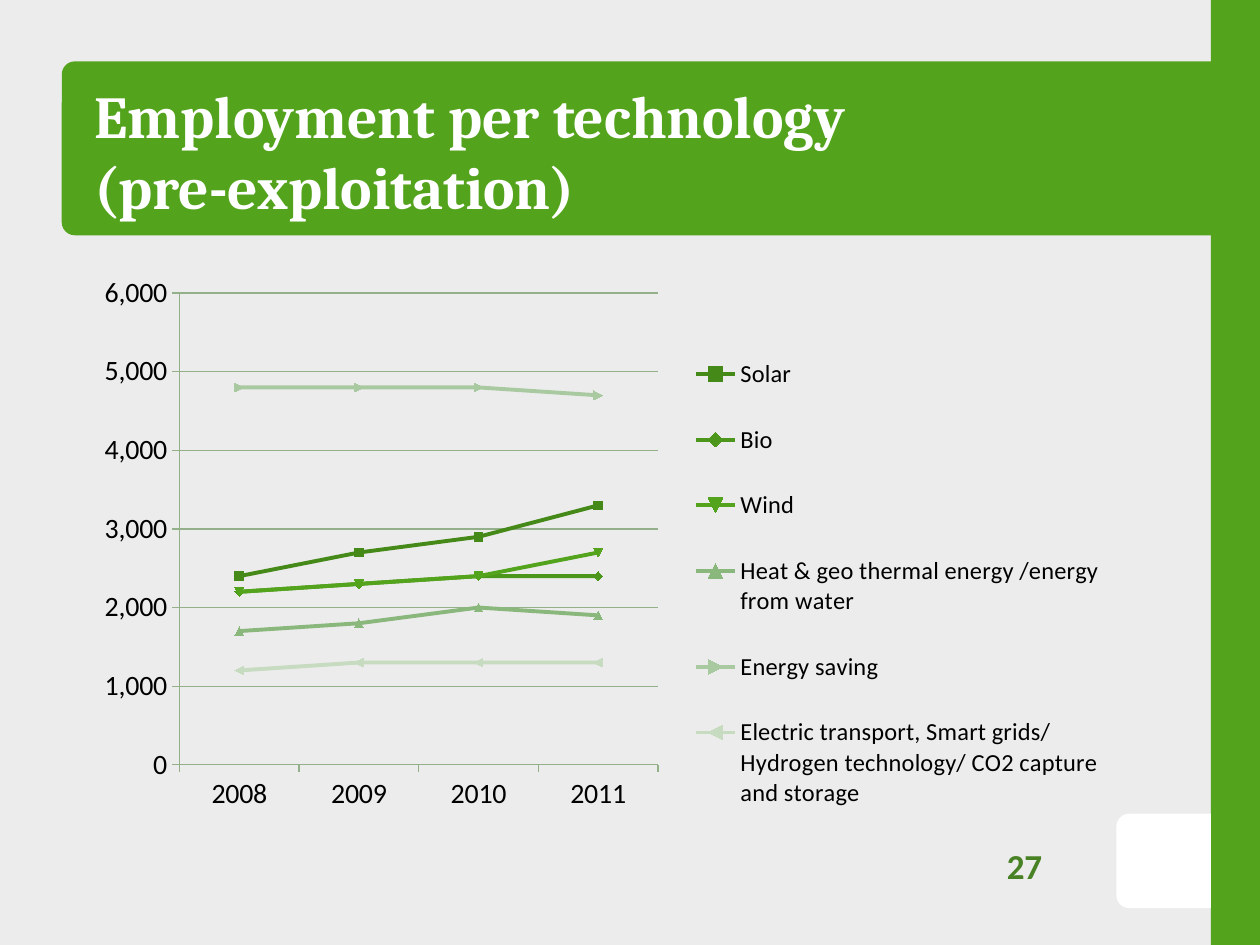
from lxml import etree
from pptx import Presentation
from pptx.chart.data import CategoryChartData
from pptx.dml.color import RGBColor
from pptx.enum.chart import XL_CHART_TYPE, XL_LEGEND_POSITION, XL_TICK_MARK
from pptx.enum.shapes import MSO_SHAPE
from pptx.enum.text import MSO_ANCHOR, PP_ALIGN
from pptx.oxml.ns import qn
from pptx.util import Inches, Pt

LINE_MARKERS = XL_CHART_TYPE.LINE_MARKERS
RIGHT = XL_LEGEND_POSITION.RIGHT
OUTSIDE = XL_TICK_MARK.OUTSIDE
MIDDLE = MSO_ANCHOR.MIDDLE
LEFT = PP_ALIGN.LEFT
RECT = MSO_SHAPE.RECTANGLE
ROUND_RECT = MSO_SHAPE.ROUNDED_RECTANGLE
ROUND_TOP = MSO_SHAPE.ROUND_2_SAME_RECTANGLE

W, H = 10, 7.5
GREEN, DARK_GREEN, AXIS_GREEN = "53A31D", "488225", "93B08A"
WHITE, BLACK, PAPER = "FFFFFF", "000000", "ECECEC"

YEARS = ["2008", "2009", "2010", "2011"]
SERIES = [
    ("Solar", "458A18", [2400, 2700, 2900, 3300]),
    ("Bio", "4B961B", [2200, 2300, 2400, 2400]),
    ("Wind", GREEN, [2200, 2300, 2400, 2700]),
    ("Heat & geo thermal energy /energy from water", "8AB77C",
     [1700, 1800, 2000, 1900]),
    ("Energy saving", "A9CAA0", [4800, 4800, 4800, 4700]),
    ("Electric transport, Smart grids/ Hydrogen technology/ CO2 capture and storage",
     "C6DBC0", [1200, 1300, 1300, 1300]),
]


def rgb(value):
    return RGBColor.from_string(value)


def box(left, top, width, height):
    """Turn shares of the slide's size into lengths."""
    return [Inches(v) for v in (left * W, top * H, width * W, height * H)]


def set_font(font, color, **values):
    font.color.rgb = rgb(color)
    for name, value in values.items():
        setattr(font, name, value)


def add_block(s, kind, area, fill, radius=None, rotation=0):
    sp = s.shapes.add_shape(kind, *box(*area))
    sp.shadow.inherit = False
    sp.fill.solid()
    sp.fill.fore_color.rgb = rgb(fill)
    sp.line.fill.background()
    sp.rotation = rotation
    if radius:
        sp.adjustments[0] = radius


def write(sp, text, margins, color, **font):
    tf = sp.text_frame
    tf.word_wrap = True
    tf.vertical_anchor = MIDDLE
    sides = ("margin_left", "margin_top", "margin_right", "margin_bottom")
    for side, margin in zip(sides, margins):
        setattr(tf, side, Inches(margin))
    p = tf.paragraphs[0]
    p.text = text
    p.alignment = LEFT
    for r in p.runs:
        set_font(r.font, color, **font)


def add_title(s, text, area):
    sp = s.shapes.title
    sp.left, sp.top, sp.width, sp.height = box(*area)
    s.shapes._spTree.append(sp._element)  # bring in front of the band
    write(sp, text, (0.1, 0.08, 0.1, 0.05), WHITE,
          name="Cambria", size=Pt(34), bold=True)


def make_layout(x, y, w, h, inner=False):
    layout = etree.Element(qn("c:layout"))
    manual = etree.SubElement(layout, qn("c:manualLayout"))
    values = {"xMode": "edge", "yMode": "edge", "x": x, "y": y, "w": w, "h": h}
    if inner:
        values = {"layoutTarget": "inner", **values}
    for tag, value in values.items():
        etree.SubElement(manual, qn("c:" + tag)).set("val", str(value))
    return layout


def set_layout(parent, layout, after=None):
    for old in parent.findall(qn("c:layout")):
        parent.remove(old)
    if after is None:
        parent.insert(0, layout)
    else:
        after.addnext(layout)


def format_axis(axis):
    axis.major_tick_mark = OUTSIDE
    axis.format.line.color.rgb = rgb(AXIS_GREEN)
    axis.format.line.width = Pt(0.75)
    set_font(axis.tick_labels.font, BLACK, name="Calibri", size=Pt(16))


def add_line_chart(s, area):
    data = CategoryChartData(number_format="#,##0")
    data.categories = YEARS
    for name, _, values in SERIES:
        data.add_series(name, values)
    chart = s.shapes.add_chart(LINE_MARKERS, *box(*area), data).chart
    chart.has_title = False
    set_font(chart.font, DARK_GREEN, name="Calibri", size=Pt(10))

    # Axes and gridlines
    for axis in (chart.category_axis, chart.value_axis):
        format_axis(axis)
    axis = chart.value_axis
    axis.minimum_scale, axis.maximum_scale, axis.major_unit = 0, 6000, 1000
    axis.tick_labels.number_format = "#,##0"
    axis.tick_labels.number_format_is_linked = False
    axis.has_major_gridlines = True
    axis.major_gridlines.format.line.color.rgb = rgb(AXIS_GREEN)
    axis.major_gridlines.format.line.width = Pt(0.75)

    # Lines and markers
    plot = chart.plots[0]
    plot.vary_by_categories = False
    for series, (_, color, _) in zip(plot.series, SERIES):
        series.smooth = False
        series.format.line.color.rgb = rgb(color)
        series.format.line.width = Pt(2.25)
        series.marker.format.fill.solid()
        series.marker.format.fill.fore_color.rgb = rgb(color)
        series.marker.format.line.color.rgb = rgb(color)

    # Legend and placement inside the chart
    chart.has_legend = True
    legend = chart.legend
    legend.position = RIGHT
    legend.include_in_layout = False
    set_font(legend.font, BLACK, name="Calibri", size=Pt(14))
    legend_xml = legend._element
    set_layout(legend_xml, make_layout(0.56, 0.08, 0.43, 0.86),
               after=legend_xml.find(qn("c:legendPos")))
    plot_area = chart._chartSpace.chart.plotArea
    set_layout(plot_area, make_layout(0.07, 0.03, 0.47, 0.78, inner=True))


def main():
    prs = Presentation()
    prs.slide_width, prs.slide_height = Inches(W), Inches(H)
    s = prs.slides.add_slide(prs.slide_layouts[5])
    s.background.fill.solid()
    s.background.fill.fore_color.rgb = rgb(PAPER)

    # Side bar, page tab and title band
    add_block(s, RECT, (0.961, 0, 0.039, 1), GREEN)
    add_block(s, ROUND_TOP, (0.886, 0.861, 0.075, 0.1), WHITE, 0.136, 270)
    add_block(s, ROUND_RECT, (0.049, 0.065, 0.939, 0.184), GREEN, 0.075)
    add_title(s, "Employment per technology\n(pre-exploitation)",
              (0.065, 0.065, 0.908, 0.184))

    # Page number
    number = s.shapes.add_textbox(*box(0.799, 0.884, 0.062, 0.063))
    write(number, "27", (0, 0, 0, 0), DARK_GREEN,
          name="Calibri", size=Pt(20), bold=True)

    add_line_chart(s, (0.083, 0.291, 0.811, 0.64))
    prs.save("out.pptx")


if __name__ == "__main__":
    main()
